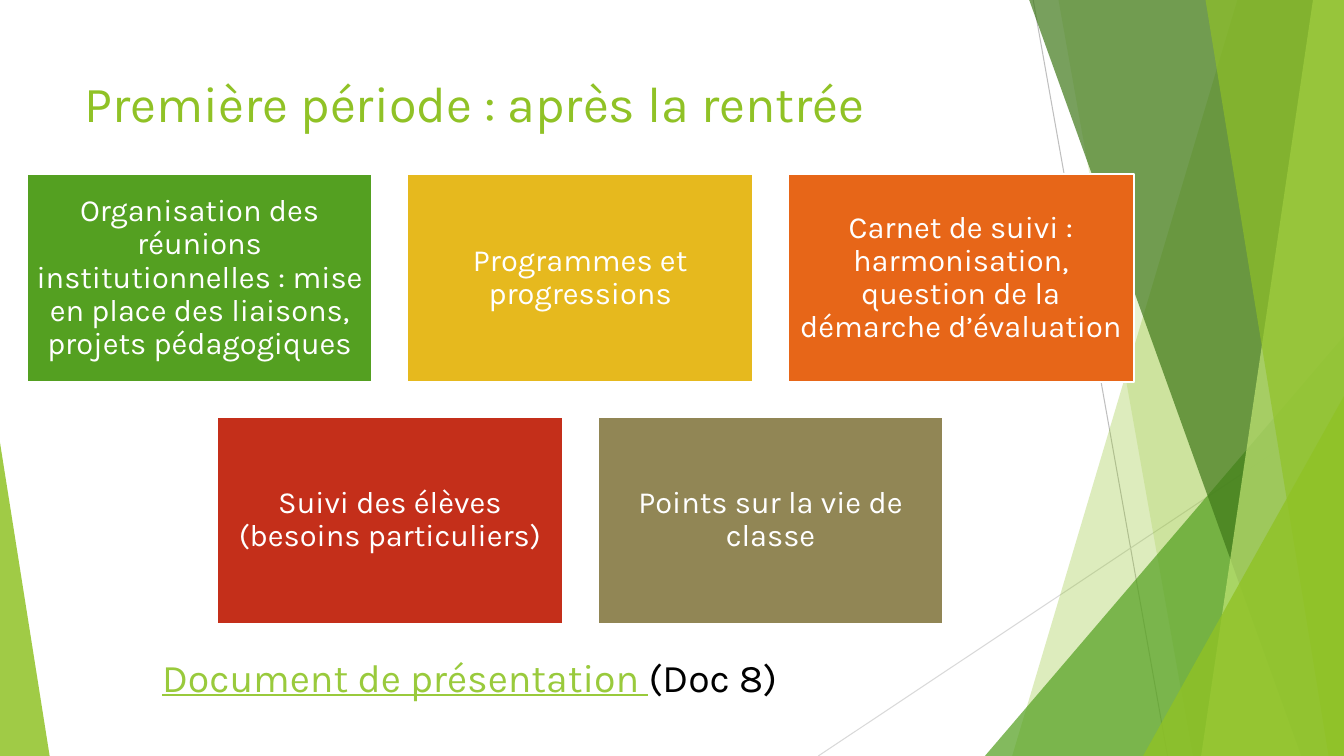
from lxml.etree import SubElement
from pptx import Presentation
from pptx.dml.color import RGBColor
from pptx.enum.shapes import MSO_CONNECTOR as Conn, MSO_SHAPE as Shape
from pptx.enum.text import MSO_ANCHOR as Anchor, PP_ALIGN as Align
from pptx.oxml.ns import qn
from pptx.util import Pt

WIDE, HIGH = 960, 540
FONT = "Karla"
TITLE = "Première période : après la rentrée"
ROWS = [
    [
        ("Organisation des réunions institutionnelles : mise en place des liaisons, projets pédagogiques", "54A021"),
        ("Programmes et progressions", "E6B91E"),
        ("Carnet de suivi : harmonisation, question de la démarche d’évaluation", "E76618"),
    ],
    [
        ("Suivi des élèves (besoins particuliers)", "C42F1A"),
        ("Points sur la vie de classe", "918655"),
    ],
]
FOOTER = [("Document de présentation ", "99CA3C", True), ("(Doc 8)", "000000", False)]

LINES = [((738, 0), (834, 540), "BFBFBF"), ((960, 290), (584.5, 540), "D9D9D9")]
FACETS = [
    ("band", (884, 723), "90C226", 30),
    ("band", (756, 852), "90C226", 20),
    ("peak", (703.5, 240, 256.5, 300, 1), "54A021", 72),
    ("band", (735, 929.5), "3F7819", 70),
    ("band", (938, 858), "C0E474", 70),
    ("band", (861, 949), "90C226", 65),
    ("peak", (816.5, 283, 143.5, 257, 1), "90C226", 80),
    ("peak", (0, 316, 35.5, 224, 0), "90C226", 85),
]
LEFT, TOP = 18.9, 124.6
BOX_W, BOX_H, GAP = 247.2, 148.2, 24.7


def paint(color, code):
    color.rgb = RGBColor.from_string(code)


def fill(shape, code, alpha=100):
    shape.shadow.inherit = False
    shape.fill.solid()
    paint(shape.fill.fore_color, code)
    if alpha < 100:
        tint = shape.fill._xPr.find(qn("a:solidFill"))[0]
        SubElement(tint, qn("a:alpha"), val=str(alpha * 1000))


def style(font, size, code):
    font.name = FONT
    font.size = Pt(size)
    paint(font.color, code)


def add_line(shapes, start, end, code):
    line = shapes.add_connector(Conn.STRAIGHT, *map(Pt, start + end))
    paint(line.line.color, code)
    line.line.width = Pt(0.75)
    SubElement(line._element.spPr, qn("a:effectLst"))


def add_facet(shapes, kind, dims, code, alpha):
    if kind == "band":
        high, low = dims
        path = shapes.build_freeform(Pt(high), Pt(-0.5))
        ends = [(WIDE, -0.5), (WIDE, HIGH), (low, HIGH)]
        path.add_line_segments([(Pt(x), Pt(y)) for x, y in ends])
        facet = path.convert_to_shape()
    else:
        *frame, tip = dims
        facet = shapes.add_shape(Shape.ISOSCELES_TRIANGLE, *map(Pt, frame))
        facet.adjustments[0] = tip
    fill(facet, code, alpha)
    facet.line.fill.background()


def add_box(shapes, x, y, text, code):
    box = shapes.add_shape(Shape.RECTANGLE, Pt(x), Pt(y), Pt(BOX_W), Pt(BOX_H))
    fill(box, code)
    paint(box.line.color, "FFFFFF")
    box.line.width = Pt(1.5)
    frame = box.text_frame
    frame.word_wrap = True
    frame.vertical_anchor = Anchor.MIDDLE
    frame.margin_left = frame.margin_right = Pt(6.6)
    frame.margin_top = frame.margin_bottom = Pt(6.6)
    para = frame.paragraphs[0]
    para.text = text
    para.alignment = Align.CENTER
    para.line_spacing = 0.9
    style(para.font, 22, "FFFFFF")


def add_title(title):
    title.left, title.top, title.width, title.height = map(Pt, (53.3, 48, 677, 104))
    title.text = TITLE
    title.text_frame.vertical_anchor = Anchor.TOP
    para = title.text_frame.paragraphs[0]
    para.alignment = Align.LEFT
    style(para.font, 36, "90C226")


def add_footer(shapes):
    frame = shapes.add_textbox(*map(Pt, (108.7, 463, 481.7, 41))).text_frame
    frame.word_wrap = True
    para = frame.paragraphs[0]
    for text, code, under in FOOTER:
        run = para.add_run()
        run.text = text
        style(run.font, 28, code)
        run.font.underline = under


def main():
    deck = Presentation()
    deck.slide_width, deck.slide_height = Pt(WIDE), Pt(HIGH)
    shapes = deck.slides.add_slide(deck.slide_layouts[5]).shapes
    for line in LINES:
        add_line(shapes, *line)
    for facet in FACETS:
        add_facet(shapes, *facet)
    add_title(shapes.title)
    most = max(map(len, ROWS))
    for i, row in enumerate(ROWS):
        start = LEFT + (most - len(row)) * (BOX_W + GAP) / 2
        for j, (text, code) in enumerate(row):
            add_box(shapes, start + j * (BOX_W + GAP), TOP + i * (BOX_H + GAP), text, code)
    add_footer(shapes)
    deck.save("out.pptx")


if __name__ == "__main__":
    main()
